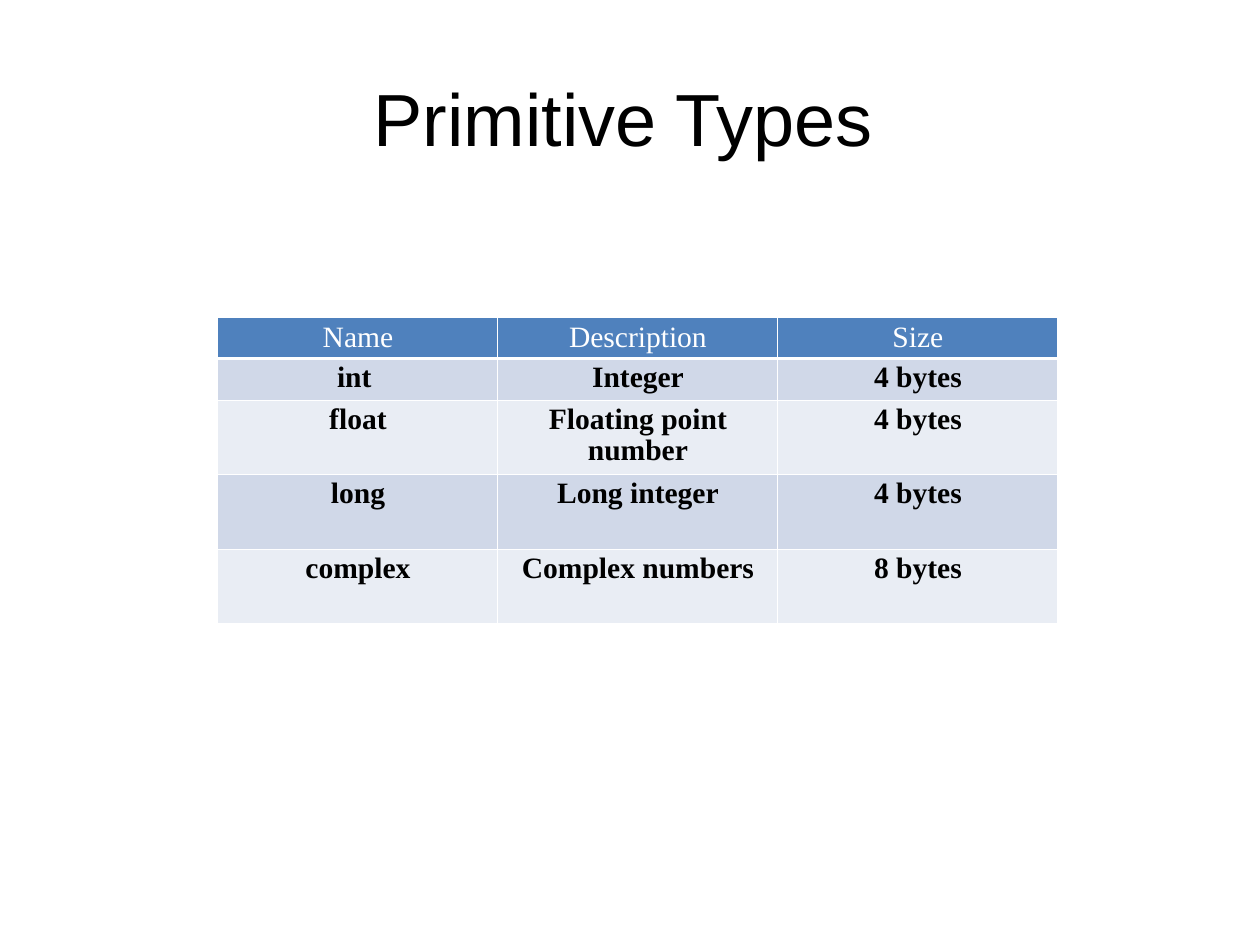
import dataclasses

import lxml.etree
import pptx
import pptx.dml.color
import pptx.enum.text
import pptx.oxml.ns
import pptx.presentation
import pptx.slide
import pptx.table
import pptx.text.text
import pptx.util

Inches = pptx.util.Inches
COLORS = {
    "black": "000000",
    "white": "FFFFFF",
    "head": "4F81BD",
    "odd": "D0D8E8",
    "even": "E9EDF4",
}


@dataclasses.dataclass(frozen=True)
class Row:
    words: tuple[str, str, str]
    height: float
    fill: str
    ink: str = "black"
    bold: bool = True
    top: float = 1
    base: float = 1


ROWS = [
    Row(("Name", "Description", "Size"), 0.46, "head", "white", bold=False, base=3),
    Row(("int ", "Integer", "4 bytes"), 0.47, "odd", top=3),
    Row(("float", "Floating point number", "4 bytes"), 0.84, "even"),
    Row(("long", "Long integer", "4 bytes"), 0.84, "odd"),
    Row(("complex", "Complex numbers", "8 bytes"), 0.84, "even"),
]
LEFT, TOP, WIDTH = 2.46, 3.59, 3.16  # table corner and column width


def get_color(name: str) -> pptx.dml.color.RGBColor:
    return pptx.dml.color.RGBColor.from_string(COLORS[name])


def set_text(frame: pptx.text.text.TextFrame, words: str, ink: str, style: dict) -> None:
    """Write one centred line of text in the given font style."""
    frame.text = words
    line = frame.paragraphs[0]
    line.alignment = pptx.enum.text.PP_ALIGN.CENTER
    font = line.runs[0].font
    for key, value in style.items():
        setattr(font, key, value)
    font.color.rgb = get_color(ink)


def add_border(cell: pptx.table._Cell, side: str, width: float) -> None:
    """Draw one white edge of a cell."""
    qn = pptx.oxml.ns.qn
    props = cell._tc.get_or_add_tcPr()
    edge = lxml.etree.SubElement(props, qn(f"a:ln{side}"), w=str(pptx.util.Pt(width)))
    fill = lxml.etree.SubElement(edge, qn("a:solidFill"))
    lxml.etree.SubElement(fill, qn("a:srgbClr"), val=COLORS["white"])


def draw_title(slide: pptx.slide.Slide) -> None:
    title = slide.shapes.title
    place = {"left": 3.41, "top": 0.45, "width": 7.25, "height": 1.75}
    for key, value in place.items():
        setattr(title, key, Inches(value))
    title.text_frame.vertical_anchor = pptx.enum.text.MSO_ANCHOR.MIDDLE
    style = {"name": "Arial", "size": pptx.util.Pt(60), "bold": False}
    set_text(title.text_frame, "Primitive Types", "black", style)


def draw_cell(cell: pptx.table._Cell, words: str, row: Row) -> None:
    style = {"name": "Times New Roman", "size": pptx.util.Pt(24), "bold": row.bold}
    set_text(cell.text_frame, words, row.ink, style)
    cell.text_frame.paragraphs[0].line_spacing = 0.95
    # Edges come before the fill in the cell's XML
    for side, width in {"L": 1, "R": 1, "T": row.top, "B": row.base}.items():
        add_border(cell, side, width)
    cell.fill.solid()
    cell.fill.fore_color.rgb = get_color(row.fill)


def draw_table(slide: pptx.slide.Slide) -> None:
    count = len(ROWS[0].words)
    height = sum(row.height for row in ROWS)
    table = slide.shapes.add_table(
        len(ROWS), count, Inches(LEFT), Inches(TOP), Inches(WIDTH * count), Inches(height)
    ).table
    for col in table.columns:
        col.width = Inches(WIDTH)
    for i, row in enumerate(ROWS):
        table.rows[i].height = Inches(row.height)
        for j, words in enumerate(row.words):
            draw_cell(table.cell(i, j), words, row)


def main() -> None:
    deck = pptx.Presentation()
    deck.slide_width, deck.slide_height = Inches(14.22), Inches(10.67)
    slide = deck.slides.add_slide(deck.slide_layouts[5])  # title only
    draw_title(slide)
    draw_table(slide)
    deck.save("out.pptx")


if __name__ == "__main__":
    main()
